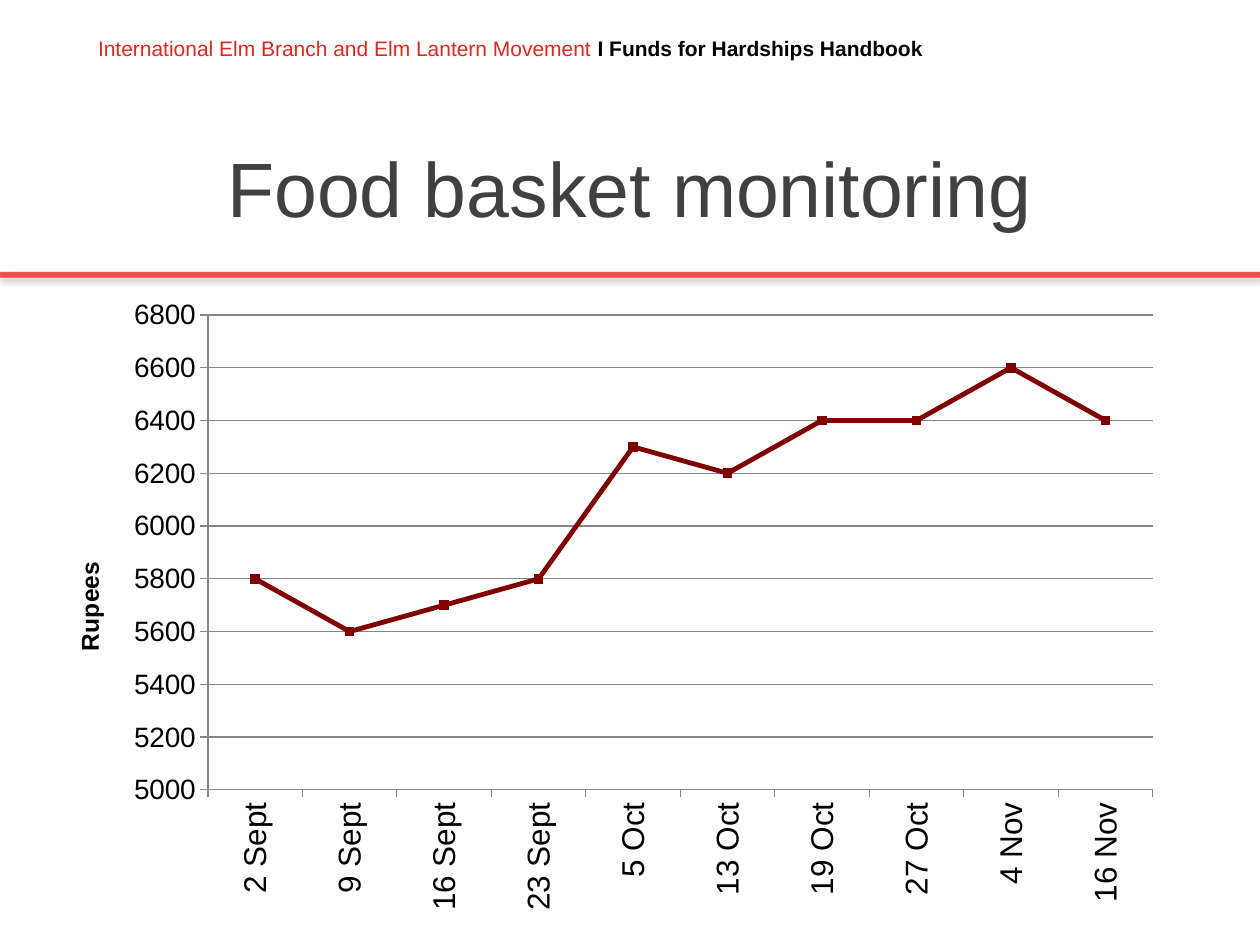
import pptx
import pptx.chart.data
import pptx.dml.color
import pptx.enum.chart
import pptx.enum.shapes
import pptx.enum.text
import pptx.oxml
import pptx.util
from pptx.util import Inches

FONT = "Arial"
COLORS = {"header": "DC281E", "black": "000000", "title": "404040",
          "rule": "FF0000", "series": "800000", "grid": "868686"}
PRICES = {"2 Sept": 5800, "9 Sept": 5600, "16 Sept": 5700, "23 Sept": 5800,
          "5 Oct": 6300, "13 Oct": 6200, "19 Oct": 6400, "27 Oct": 6400,
          "4 Nov": 6600, "16 Nov": 6400}
A_NS = "http://schemas.openxmlformats.org/drawingml/2006/main"
C_NS = "http://schemas.openxmlformats.org/drawingml/2006/chart"


def rgb(name):
    return pptx.dml.color.RGBColor.from_string(COLORS[name])


def style(font, size, color, bold=False):
    font.name = FONT
    font.size = pptx.util.Pt(size)
    font.bold = bold
    font.color.rgb = rgb(color)


def style_line(line, color, width):
    line.color.rgb = rgb(color)
    line.width = pptx.util.Pt(width)


def add_text(slide, box, runs, size, align):
    """Place one paragraph of (text, color, bold) runs in the box."""
    frame = slide.shapes.add_textbox(*box).text_frame
    frame.word_wrap = True
    frame.vertical_anchor = pptx.enum.text.MSO_ANCHOR.MIDDLE
    paragraph = frame.paragraphs[0]
    paragraph.alignment = align
    for text, color, bold in runs:
        run = paragraph.add_run()
        run.text = text
        style(run.font, size, color, bold)


def add_header(slide, box):
    add_text(slide, box, [
        ("International Elm Branch and Elm Lantern Movement ", "header", False),
        ("I Funds for Hardships Handbook", "black", True),
    ], 12, pptx.enum.text.PP_ALIGN.LEFT)


def add_title(slide, box):
    add_text(slide, box, [("Food basket monitoring", "title", False)],
             44, pptx.enum.text.PP_ALIGN.CENTER)


def add_rule(slide, left, top, width):
    """Draw the translucent red rule with its soft shadow."""
    rule = slide.shapes.add_connector(
        pptx.enum.shapes.MSO_CONNECTOR.STRAIGHT, left, top, left + width, top)
    style_line(rule.line, "rule", 3.25)
    properties = rule._element.spPr
    fill = properties.find(f".//{{{A_NS}}}srgbClr")
    fill.append(pptx.oxml.parse_xml(f'<a:alpha xmlns:a="{A_NS}" val="67000"/>'))
    properties.append(pptx.oxml.parse_xml(
        f'<a:effectLst xmlns:a="{A_NS}"><a:outerShdw blurRad="39370" dist="20320" '
        f'dir="5400000" rotWithShape="0"><a:srgbClr val="{COLORS["black"]}">'
        '<a:alpha val="38000"/></a:srgbClr></a:outerShdw></a:effectLst>'))


def layout(box, left, top, size=None):
    """Return a manual layout, from lengths within the chart's box."""
    chart_width, chart_height = box[2:]
    values = [("xMode", "edge"), ("yMode", "edge"),
              ("x", left / chart_width), ("y", top / chart_height)]
    if size:
        values.insert(0, ("layoutTarget", "inner"))
        values += [("w", size[0] / chart_width), ("h", size[1] / chart_height)]
    parts = "".join(f'<c:{tag} val="{value}"/>' for tag, value in values)
    return pptx.oxml.parse_xml(f'<c:layout xmlns:c="{C_NS}"><c:manualLayout>{parts}'
                               '</c:manualLayout></c:layout>')


def remove_layout(element):
    for old in element.findall(f"{{{C_NS}}}layout"):
        element.remove(old)


def style_axis(axis, size):
    style(axis.tick_labels.font, size, "black")
    style_line(axis.format.line, "grid", 0.75)
    axis.major_tick_mark = pptx.enum.chart.XL_TICK_MARK.OUTSIDE
    axis.minor_tick_mark = pptx.enum.chart.XL_TICK_MARK.NONE


def add_price_chart(slide, box):
    data = pptx.chart.data.CategoryChartData()
    data.categories = list(PRICES)
    data.add_series("Series 1", list(PRICES.values()))
    chart = slide.shapes.add_chart(
        pptx.enum.chart.XL_CHART_TYPE.LINE_MARKERS, *box, data).chart
    style(chart.font, 10, "black")
    chart.has_legend = False
    chart.has_title = False
    plot = chart.plots[0]
    plot.vary_by_categories = False

    prices = plot.series[0]
    prices.smooth = False
    style_line(prices.format.line, "series", 2.75)
    prices.marker.style = pptx.enum.chart.XL_MARKER_STYLE.SQUARE
    prices.marker.size = 5
    prices.marker.format.fill.solid()
    prices.marker.format.fill.fore_color.rgb = rgb("series")
    style_line(prices.marker.format.line, "series", 0.75)

    dates, rupees = chart.category_axis, chart.value_axis
    style_axis(dates, 18)
    dates._element.find(f".//{{{A_NS}}}bodyPr").set("rot", "-5400000")
    style_axis(rupees, 16)
    rupees.minimum_scale, rupees.maximum_scale, rupees.major_unit = 5000, 6800, 200
    rupees.has_major_gridlines = True
    style_line(rupees.major_gridlines.format.line, "grid", 0.75)

    caption = rupees.axis_title
    caption.text_frame.text = "Rupees"
    style(caption.text_frame.paragraphs[0].runs[0].font, 14, "black", True)
    caption.text_frame._txBody.bodyPr.set("rot", "-5400000")
    remove_layout(caption._element)
    caption._element.find(f"{{{C_NS}}}tx").addnext(
        layout(box, Inches(0.17), Inches(2.14)))

    area = chart._chartSpace.chart.plotArea
    remove_layout(area)
    area.insert(0, layout(box, Inches(1.27), Inches(0.22),
                          (Inches(7.5), Inches(3.77))))


def main():
    deck = pptx.Presentation()
    deck.slide_width, deck.slide_height = Inches(10), Inches(7.5)
    slide = deck.slides.add_slide(deck.slide_layouts[6])
    add_header(slide, (Inches(0.68), Inches(0.23), Inches(8.64), Inches(0.3)))
    add_rule(slide, 0, Inches(2.18), deck.slide_width)
    add_title(slide, (Inches(0.5), Inches(0.86), Inches(9), Inches(1.25)))
    add_price_chart(slide, (Inches(0.38), Inches(2.28), Inches(8.96), Inches(5.06)))
    deck.save("out.pptx")


if __name__ == "__main__":
    main()
